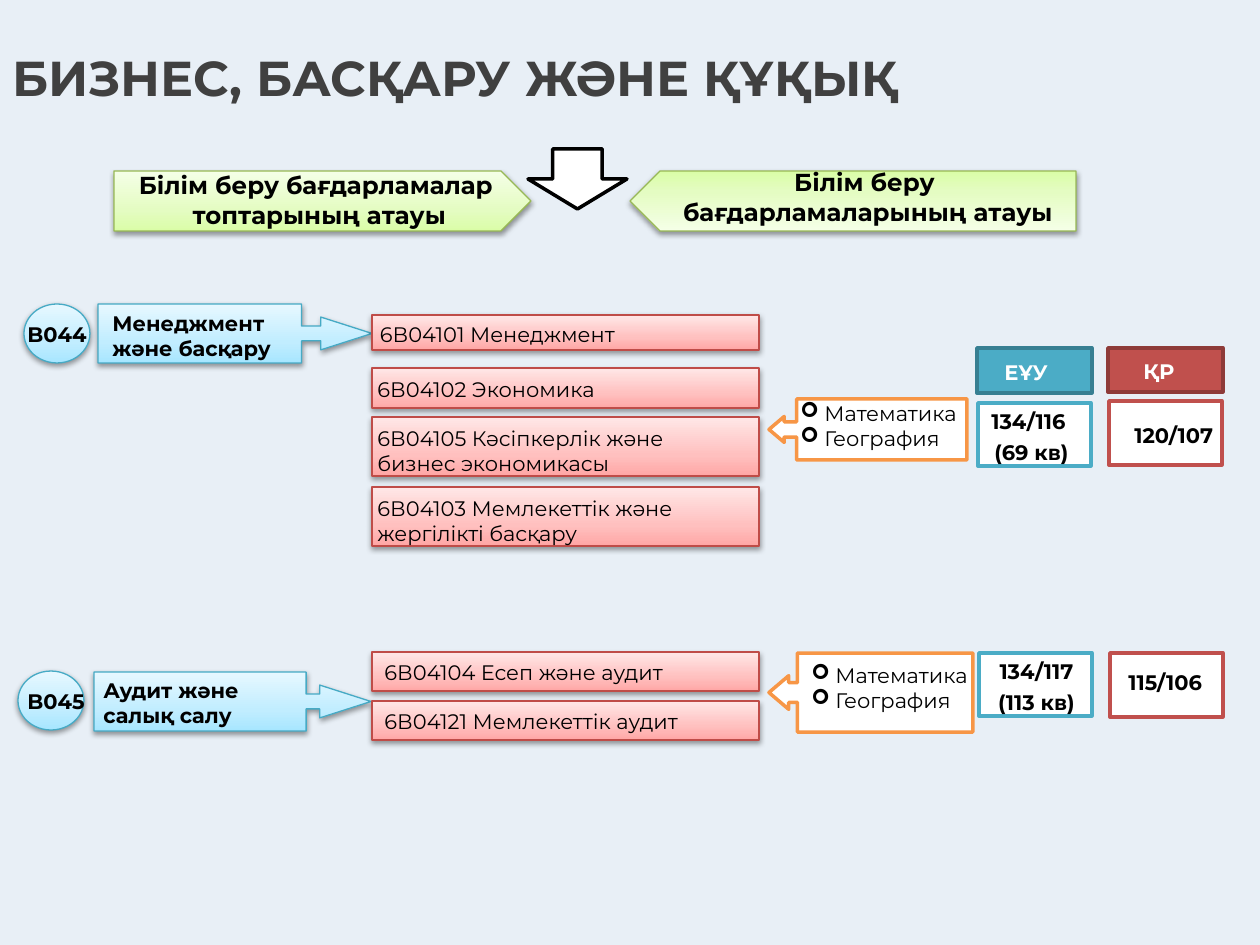
import pptx
import pptx.util
import pptx.dml.color
import pptx.enum.shapes
import pptx.enum.text
import pptx.oxml
import pptx.oxml.ns

KIND = pptx.enum.shapes.MSO_SHAPE
ALIGN = pptx.enum.text.PP_ALIGN
NS = pptx.oxml.ns.nsdecls("a")

BLUE = ("A7E6FF", "C1EDFF", "E7F8FF", "46AAC5")
RED = ("FFA6A5", "FFC0BF", "FFE7E7", "BF4C48")
GREEN = ("DAFDA7", "E4FCC2", "F5FFE7", "98B955")
TEAL, BRICK, ORANGE = "4BACC6", "C0504D", "F79646"


def px(n):
    return pptx.util.Emu(n * 914400 // 126)


def rgb(code):
    return pptx.dml.color.RGBColor.from_string(code)


def xml(text):
    return pptx.oxml.parse_xml(text)


class Deck:
    font = "Montserrat"
    size = 12

    def __init__(self):
        self.prs = pptx.Presentation()
        self.prs.slide_width, self.prs.slide_height = px(1260), px(945)
        self.slide = self.prs.slides.add_slide(self.prs.slide_layouts[6])

    def shape(self, kind, box, fill, line=None, adj=()):
        item = self.slide.shapes.add_shape(kind, *map(px, box))
        item.shadow.inherit = False
        for i, value in enumerate(adj):
            item.adjustments[i] = value
        item.fill.solid()
        item.fill.fore_color.rgb = rgb(fill)
        if line:
            item.line.color.rgb = rgb(line)
            item.line.width = pptx.util.Pt(2)
        else:
            item.line.fill.background()
        return item

    def glossy(self, kind, box, tones, adj=()):
        """Shape with a vertical gradient, a thin line and a soft shadow."""
        item = self.shape(kind, box, tones[0], tones[3], adj)
        item.line.width = pptx.util.Pt(0.75)
        stops = "".join(
            f'<a:gs pos="{pos}"><a:srgbClr val="{tone}"/></a:gs>'
            for pos, tone in zip((0, 35000, 100000), tones))
        props = item.fill._xPr
        props.replace(props.find(pptx.oxml.ns.qn("a:solidFill")), xml(
            f'<a:gradFill {NS} rotWithShape="1"><a:gsLst>{stops}</a:gsLst>'
            '<a:lin ang="16200000" scaled="1"/></a:gradFill>'))
        props.find(pptx.oxml.ns.qn("a:effectLst")).append(xml(
            f'<a:outerShdw {NS} blurRad="40000" dist="20000" dir="5400000" '
            'rotWithShape="0"><a:srgbClr val="000000"><a:alpha val="38000"/>'
            '</a:srgbClr></a:outerShdw>'))
        return item

    def veil(self, fill, alpha):
        item = self.shape(KIND.RECTANGLE, (0, 0, 1260, 945), fill)
        tone = item.fill._xPr.find(".//" + pptx.oxml.ns.qn("a:srgbClr"))
        tone.append(xml(f'<a:alpha {NS} val="{alpha * 1000}"/>'))

    def text(self, box, lines, bold=False, size=None, color="000000",
             align=ALIGN.LEFT, bullet=None, loose=False):
        frame = self.slide.shapes.add_textbox(*map(px, box)).text_frame
        frame.word_wrap = True
        for i, line in enumerate(lines):
            para = frame.add_paragraph() if i else frame.paragraphs[0]
            para.alignment = align
            if loose:
                para.line_spacing = 1.15
                para.space_after = pptx.util.Pt(1)
            if bullet:
                props = para._p.get_or_add_pPr()
                props.set("marL", str(px(24)))
                props.set("indent", str(-px(24)))
                props.append(xml(f'<a:buFont {NS} typeface="Wingdings"/>'))
                props.append(xml(f'<a:buChar {NS} char="{bullet}"/>'))
            run = para.add_run()
            run.text = line
            run.font.name = self.font
            run.font.size = pptx.util.Pt(size or self.size)
            run.font.bold = bold
            run.font.color.rgb = rgb(color)
        return frame


def main():
    deck = Deck()
    deck.veil("DCE6F2", 63)
    title = deck.text((0, 3, 1260, 147), ["БИЗНЕС, БАСҚАРУ ЖӘНЕ ҚҰҚЫҚ"],
                      True, 28, "404040")
    title.vertical_anchor = pptx.enum.text.MSO_ANCHOR.MIDDLE

    # Column headings
    heads = [
        ((114, 171, 417, 60), 0, (123, 164, 393, 72),
         ["Білім беру бағдарламалар ", "топтарының атауы"]),
        ((630, 171, 446, 60), 180, (650, 161, 436, 72),
         ["Білім беру ", "бағдарламаларының атауы"]),
    ]
    for box, turn, area, lines in heads:
        deck.glossy(KIND.PENTAGON, box, GREEN).rotation = turn
        deck.text(area, lines, True, 14, align=ALIGN.CENTER)
    deck.shape(KIND.DOWN_ARROW, (528, 149, 99, 60), "FFFFFF", "000000")

    # Programme groups: code circle and callout
    groups = [
        ((24, 304, 66, 59), (15, 315, 90, 38), "B044",
         (98, 304, 274, 59), 0.743, (100, 304, 205, 63),
         ["Менеджмент", "және басқару"]),
        ((18, 671, 66, 59), (15, 682, 90, 38), "B045",
         (94, 672, 277, 59), 0.766, (91, 671, 234, 63),
         ["Аудит және", "салық салу"]),
    ]
    for disc, spot, code, box, part, area, lines in groups:
        deck.glossy(KIND.RIGHT_ARROW_CALLOUT, box, BLUE,
                    (0.25, 0.278, 0.868, part))
        deck.text(area, lines, True)
        deck.glossy(KIND.OVAL, disc, BLUE)
        deck.text(spot, [code], True)

    # Programmes: top and height of bar, then left and top of text
    courses = [
        (315, 35, 362, 315, [" 6В04101 Менеджмент"]),
        (368, 40, 365, 370, ["6В04102 Экономика"]),
        (417, 59, 365, 419, ["6В04105 Кәсіпкерлік және бизнес экономикасы"]),
        (487, 59, 365, 489, ["6В04103 Мемлекеттік және",
                             "жергілікті басқару"]),
        (652, 39, 372, 653, ["6В04104 Есеп және аудит"]),
        (701, 39, 372, 702, ["6В04121 Мемлекеттік аудит"]),
    ]
    for top, high, left, y, lines in courses:
        deck.glossy(KIND.RECTANGLE, (372, top, 387, high), RED)
        deck.text((left, y, 387, 38), lines)

    # Exam subjects
    subjects = [((769, 399, 198, 61), (788, 394, 273, 63)),
                ((769, 653, 204, 79), (799, 656, 255, 63))]
    for box, area in subjects:
        deck.shape(KIND.LEFT_ARROW_CALLOUT, box, "FFFFFF", ORANGE,
                   (0.25, 0.213, 0.25, 0.86))
        deck.text(area, ["Математика", "География"], bullet="➢")

    # Scores
    for box, fill, line, area, name in [
            ((977, 348, 115, 45), TEAL, "377F92", (992, 353, 91, 38), "ЕҰУ"),
            ((1108, 348, 115, 44), BRICK, "8E3B39", (1131, 352, 97, 38), "ҚР")]:
        deck.shape(KIND.RECTANGLE, box, fill, line)
        deck.text(area, [name], True, color="FFFFFF")
    for box, area, lines in [
            ((978, 403, 113, 63), (975, 399, 113, 71), ["134/116 ", "(69 кв)"]),
            ((979, 653, 113, 63), (980, 649, 113, 71), ["134/117", "(113 кв)"])]:
        deck.shape(KIND.RECTANGLE, box, "FFFFFF", TEAL)
        deck.text(area, lines, True, align=ALIGN.CENTER, loose=True)
    for box, area, score in [
            ((1109, 401, 113, 64), (1122, 416, 110, 38), "120/107"),
            ((1110, 653, 113, 64), (1116, 663, 100, 38), "115/106")]:
        deck.shape(KIND.RECTANGLE, box, "FFFFFF", BRICK)
        deck.text(area, [score], True)

    deck.prs.save("out.pptx")


if __name__ == "__main__":
    main()
